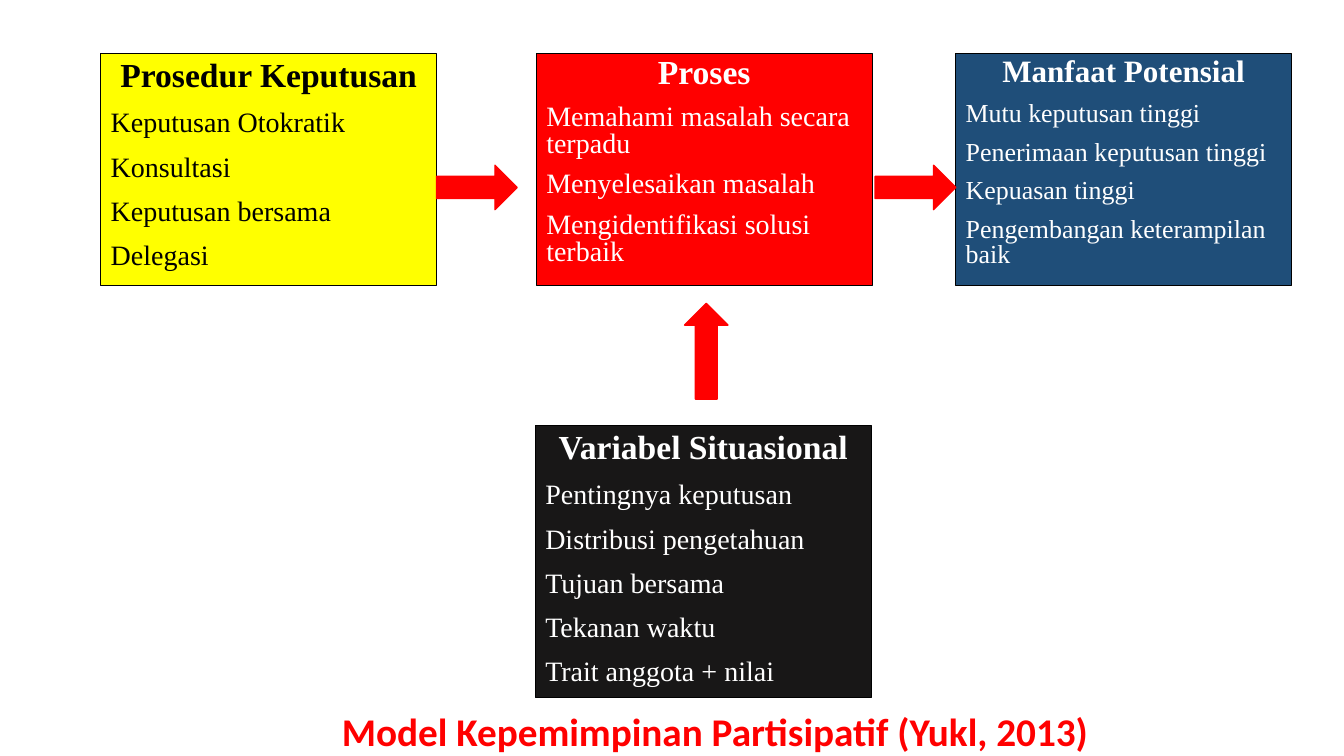
from pptx import Presentation
from pptx.dml.color import RGBColor
from pptx.enum.shapes import MSO_SHAPE
from pptx.enum.text import MSO_ANCHOR, MSO_AUTO_SIZE, PP_ALIGN
from pptx.util import Inches, Pt

BLACK = RGBColor(0x00, 0x00, 0x00)
WHITE = RGBColor(0xFF, 0xFF, 0xFF)
RED = RGBColor(0xFF, 0x00, 0x00)
YELLOW = RGBColor(0xFF, 0xFF, 0x00)
NAVY = RGBColor(0x1F, 0x4E, 0x79)
DARK = RGBColor(0x18, 0x17, 0x17)

BOX_WIDTH = 3.33
TOP = 0.53
ARROW_TOP = 1.64


def write(para, text, size=20, color=BLACK, bold=False, font="Times New Roman",
          align=PP_ALIGN.LEFT, spacing=1.0, before=0):
    para.alignment = align
    para.line_spacing = spacing
    para.space_before = Pt(before)
    run = para.add_run()
    run.text = text
    run.font.name = font
    run.font.size = Pt(size)
    run.font.bold = bold
    run.font.color.rgb = color


def add_block(slide, kind, left, top, width, height, fill, line, weight):
    shape = slide.shapes.add_shape(
        kind, Inches(left), Inches(top), Inches(width), Inches(height))
    shape.shadow.inherit = False
    shape.fill.solid()
    shape.fill.fore_color.rgb = fill
    shape.line.color.rgb = line
    shape.line.width = Pt(weight)
    return shape


def add_box(slide, left, top, height, fill, head, items, color=WHITE,
            head_size=24, size=20, spacing=0.9):
    """Add a box with a bold centred heading above its list of items."""
    box = add_block(slide, MSO_SHAPE.RECTANGLE, left, top, BOX_WIDTH, height,
                    fill, BLACK, 0.75)
    frame = box.text_frame
    frame.word_wrap = True
    frame.vertical_anchor = MSO_ANCHOR.TOP
    write(frame.paragraphs[0], head, size=head_size, color=color, bold=True,
          align=PP_ALIGN.CENTER, spacing=spacing, before=10)
    for item in items:
        write(frame.add_paragraph(), item, size=size, color=color,
              spacing=spacing, before=10)


def add_arrow(slide, kind, left, top, width, height):
    add_block(slide, kind, left, top, width, height, RED, RED, 1)


def set_title(slide, text):
    title = slide.shapes.title
    title.left, title.top = Inches(3.2), Inches(6.97)
    title.width, title.height = Inches(7.78), Inches(0.57)
    frame = title.text_frame
    frame.word_wrap = False
    frame.auto_size = MSO_AUTO_SIZE.NONE
    frame.vertical_anchor = MSO_ANCHOR.TOP
    write(frame.paragraphs[0], text, size=28, color=RED, bold=True,
          font="Calibri", align=PP_ALIGN.CENTER)


def main():
    deck = Presentation()
    deck.slide_width, deck.slide_height = Inches(13.33), Inches(7.5)
    slide = deck.slides.add_slide(deck.slide_layouts.get_by_name("Title Only"))

    add_box(slide, 1, TOP, 2.3, YELLOW, "Prosedur Keputusan",
            ["Keputusan Otokratik", "Konsultasi", "Keputusan bersama",
             "Delegasi"], color=BLACK)
    add_box(slide, 5.32, TOP, 2.3, RED, "Proses",
            ["Memahami masalah secara terpadu", "Menyelesaikan masalah",
             "Mengidentifikasi solusi terbaik"], spacing=0.8)
    add_box(slide, 9.48, TOP, 2.3, NAVY, "Manfaat Potensial",
            ["Mutu keputusan tinggi", "Penerimaan keputusan tinggi",
             "Kepuasan tinggi", "Pengembangan keterampilan baik"],
            head_size=22.2, size=18.5, spacing=0.8)
    add_box(slide, 5.31, 4.22, 2.7, DARK, "Variabel Situasional",
            ["Pentingnya keputusan", "Distribusi pengetahuan",
             "Tujuan bersama", "Tekanan waktu", "Trait anggota + nilai"])

    for left in (4.33, 8.68):
        add_arrow(slide, MSO_SHAPE.RIGHT_ARROW, left, ARROW_TOP, 0.8, 0.44)
    add_arrow(slide, MSO_SHAPE.UP_ARROW, 6.79, 3.01, 0.43, 0.95)

    set_title(slide, "Model Kepemimpinan Partisipatif (Yukl, 2013)")
    deck.save("out.pptx")


if __name__ == "__main__":
    main()
